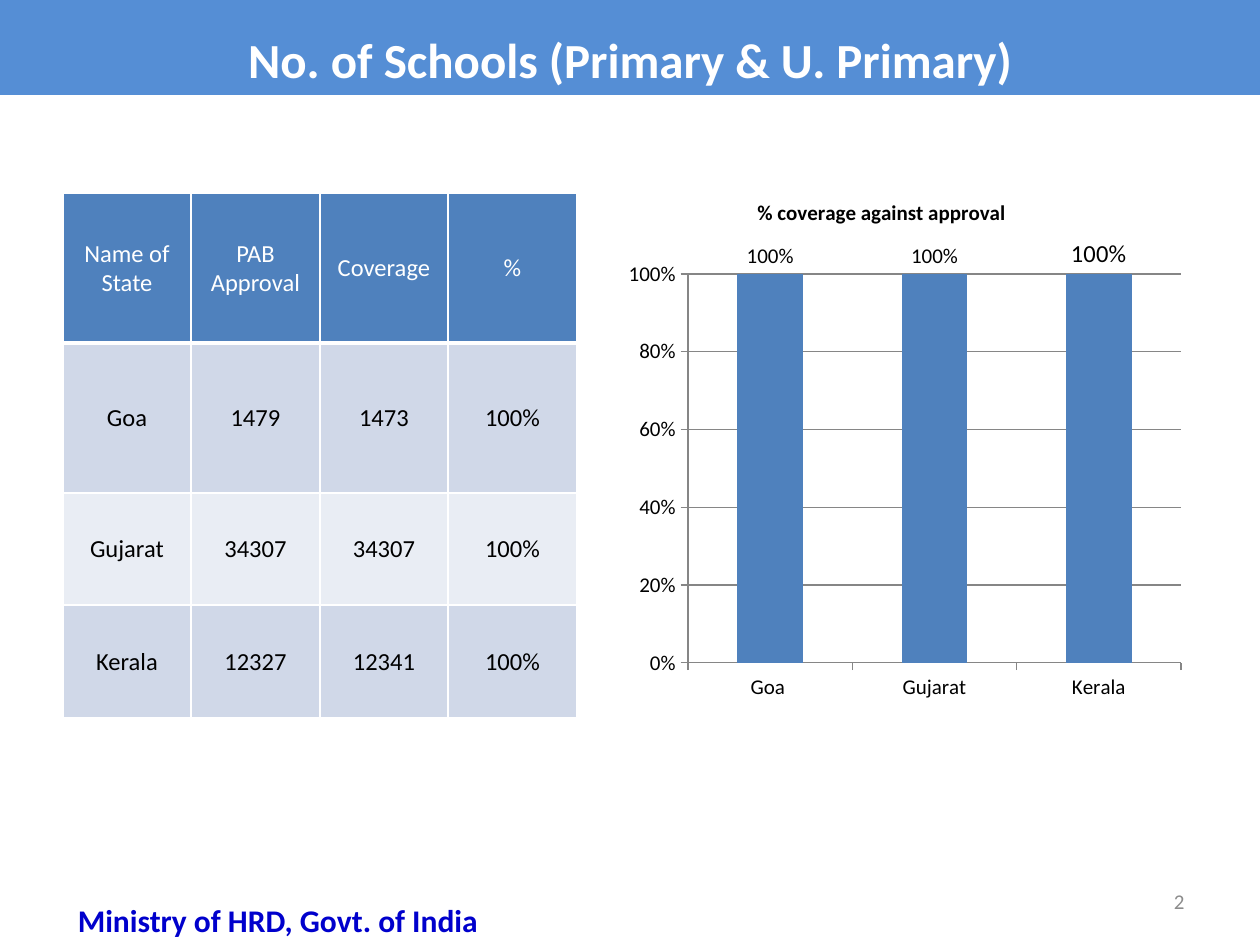
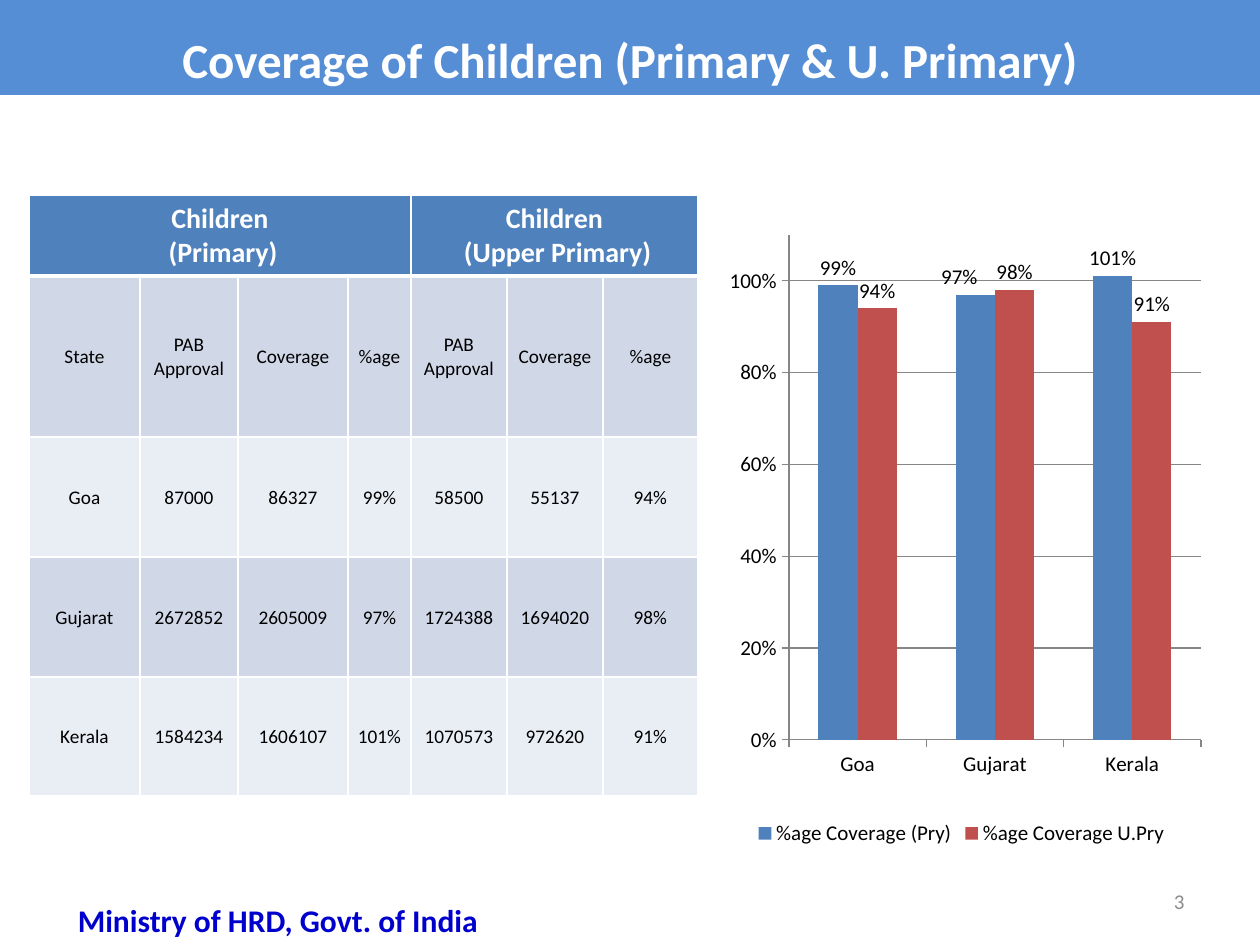
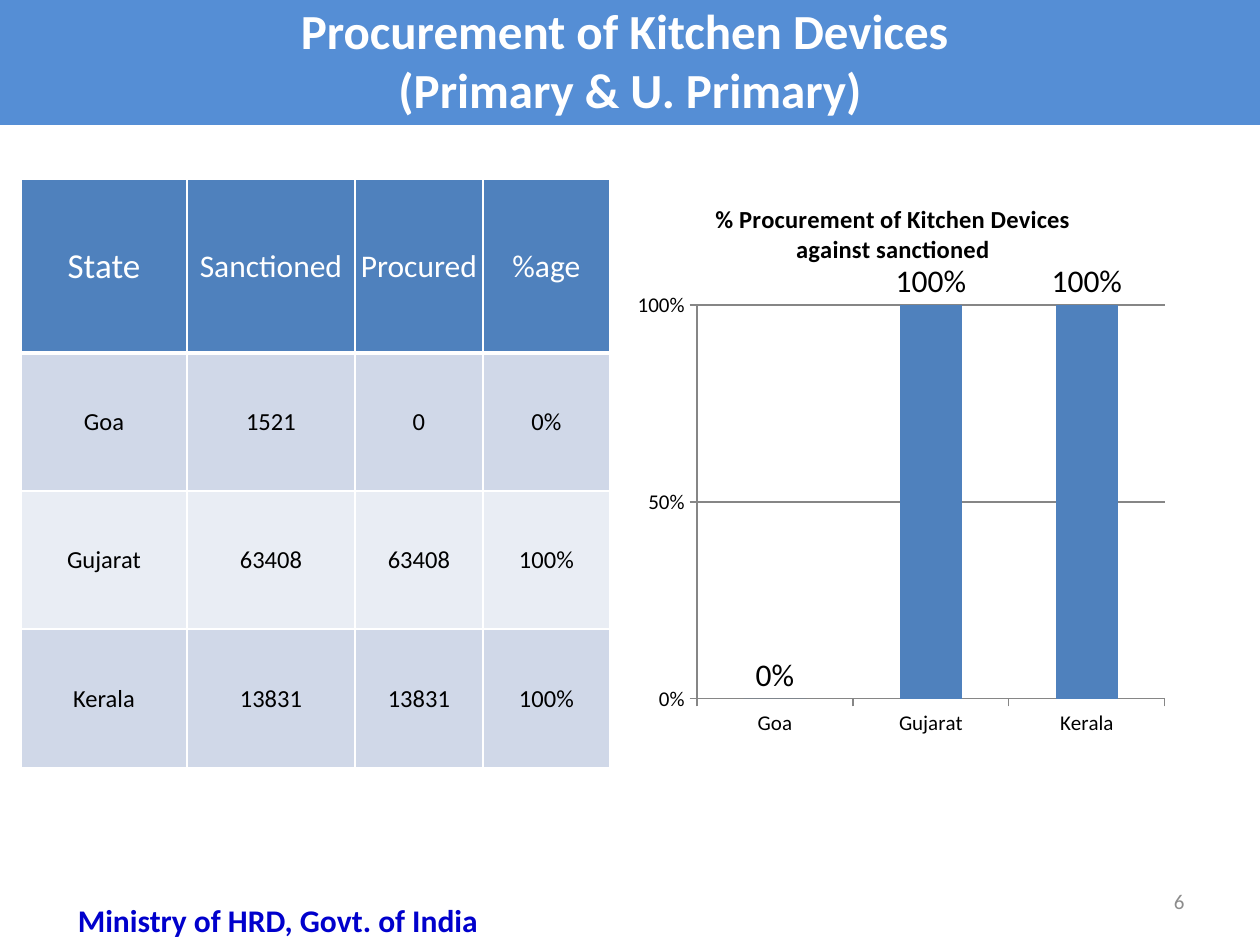
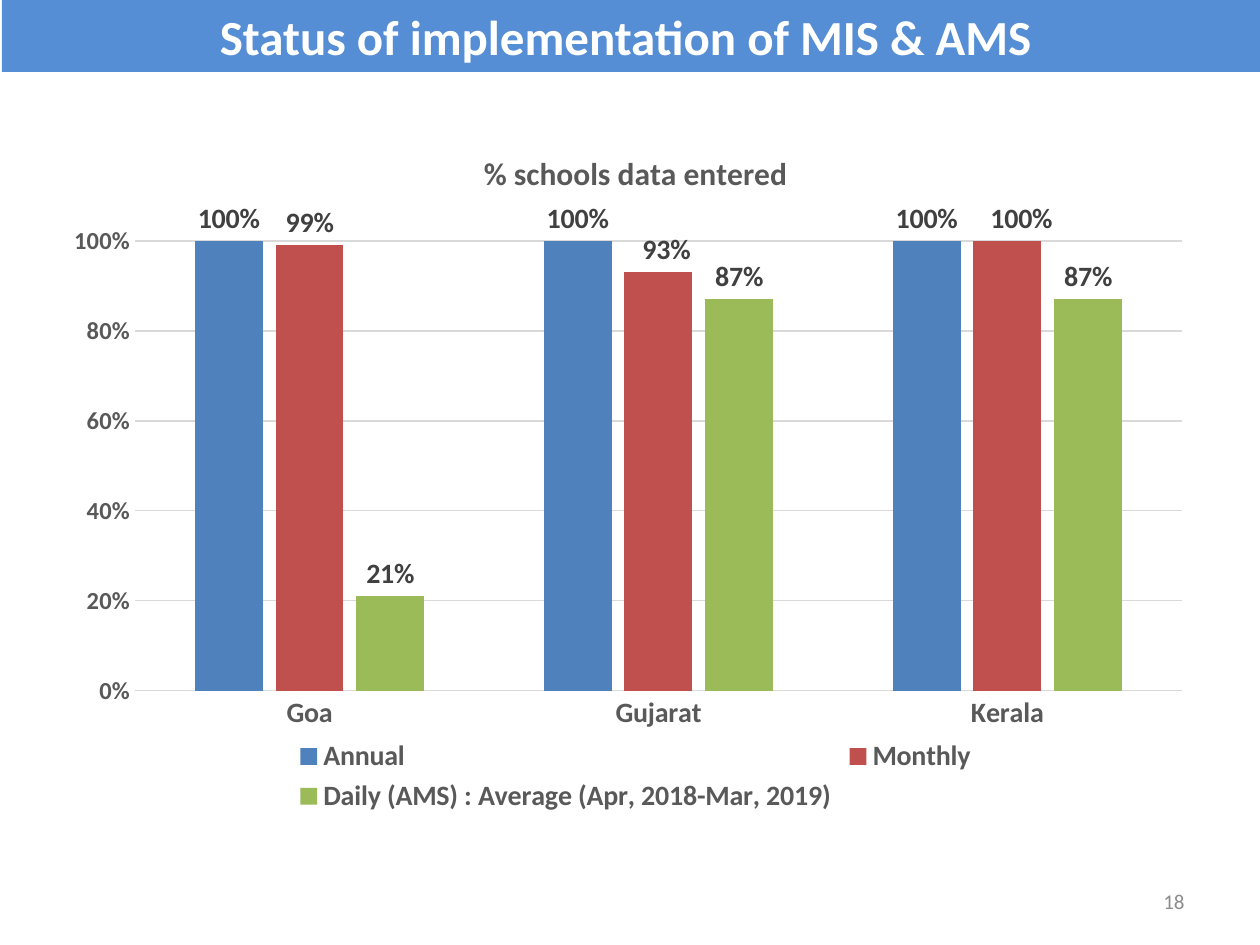
import pptx
import pptx.chart.data
import pptx.dml.color
import pptx.enum.chart
import pptx.enum.shapes
import pptx.enum.text
import pptx.oxml
import pptx.oxml.ns
import pptx.util

COLORS = {
    "band": "558ED5", "white": "FFFFFF", "black": "000000", "ministry": "0000CC",
    "page": "8C8C8C", "header": "4F81BD", "row_dark": "D0D8E8", "row_light": "E9EDF4",
    "axis": "868686", "pale": "D9D9D9", "slate": "595959", "label": "404040",
}
SERIES_COLORS = ["4F81BD", "C0504D", "9BBB59"]
FONT = "Calibri"
ALIGN = pptx.enum.text.PP_ALIGN
MIDDLE = pptx.enum.text.MSO_ANCHOR.MIDDLE
GROW = pptx.enum.text.MSO_AUTO_SIZE.SHAPE_TO_FIT_TEXT
TICK = pptx.enum.chart.XL_TICK_MARK
OUTSIDE_END = pptx.enum.chart.XL_LABEL_POSITION.OUTSIDE_END
STATES = ["Goa", "Gujarat", "Kerala"]


def px(*lengths):
    return [round(length * 914400 / 126) for length in lengths]


def write(frame, text, size, color, bold=False, align=ALIGN.CENTER, first_spacing=None):
    frame.text = text
    for paragraph in frame.paragraphs:
        paragraph.alignment = align
        for run in paragraph.runs:
            run.font.name = FONT
            run.font.size = pptx.util.Pt(size)
            run.font.bold = bold
            run.font.color.rgb = pptx.dml.color.RGBColor.from_string(COLORS[color])
    if first_spacing:
        frame.paragraphs[0].line_spacing = first_spacing


topics = [
    {
        "title": "No. of Schools (Primary & U. Primary)", "page": 2,
        "band": (0, 0, 1260, 95), "spacing": 1.4, "ministry": True,
        "table": {
            "corner": (63, 193), "columns": [128, 129, 128, 129], "rows": [150, 150, 112, 113],
            "spans": [], "sizes": (14, 14), "header_bold": False, "first_size": 14,
            "cells": [
                ["Name of State", "PAB Approval", "Coverage", "%"],
                ["Goa", "1479", "1473", "100%"],
                ["Gujarat", "34307", "34307", "100%"],
                ["Kerala", "12327", "12341", "100%"],
            ],
        },
        "chart": {
            "at": (577, 175, 609, 624), "plot": (688, 274, 493, 389),
            "title": ("% coverage against approval", 12, "black"),
            "categories": ["Goa ", "Gujarat", "Kerala"], "series": {"Series 1": [1, 1, 1]},
            "max": 1, "step": 0.2, "legend": None, "sizes": (12, 12, 12),
            "special_labels": {(0, 2): (0, 14)},
        },
    },
    {
        "title": "Coverage of Children (Primary & U. Primary)", "page": 3,
        "band": (0, 0, 1260, 95), "spacing": 1.4, "ministry": True,
        "table": {
            "corner": (29, 195), "columns": [111, 98, 110, 63, 96, 96, 95],
            "rows": [81, 161, 120, 120, 119], "spans": [(0, 3), (4, 6)],
            "sizes": (16, 11), "header_bold": True, "first_size": 16,
            "cells": [
                ["Children\n (Primary)", "", "", "", "Children\n (Upper Primary)", "", ""],
                ["State", "PAB Approval", "Coverage", "%age", "PAB Approval", "Coverage", "%age"],
                ["Goa", "87000", "86327", "99%", "58500", "55137", "94%"],
                ["Gujarat", "2672852", "2605009", "97%", "1724388", "1694020", "98%"],
                ["Kerala", "1584234", "1606107", "101%", "1070573", "972620", "91%"],
            ],
        },
        "chart": {
            "at": (703, 179, 517, 672), "plot": (789, 235, 412, 505), "title": None,
            "categories": STATES,
            "series": {"%age Coverage (Pry)": [0.99, 0.97, 1.01],
                       "%age Coverage U.Pry": [0.94, 0.98, 0.91]},
            "max": 1.1, "step": 0.2, "legend": 12, "sizes": (12, 12, 12),
            "special_labels": {(0, 1): (-16, 12)},
        },
    },
    {
        "title": "Procurement of Kitchen Devices \n(Primary & U. Primary)", "page": 6,
        "band": (0, -30, 1260, 155), "spacing": 1.4, "ministry": True,
        "table": {
            "corner": (21, 179), "columns": [166, 168, 128, 127], "rows": [174, 138, 138, 139],
            "spans": [], "sizes": (18, 14), "header_bold": False, "first_size": 20,
            "cells": [
                ["State", "Sanctioned", "Procured", "%age"],
                ["Goa", "1521", "0", "0%"],
                ["Gujarat", "63408", "63408", "100%"],
                ["Kerala", "13831", "13831", "100%"],
            ],
        },
        "chart": {
            "at": (620, 179, 546, 590), "plot": (697, 305, 468, 394),
            "title": ("% Procurement of Kitchen Devices against sanctioned", 14, "black"),
            "categories": STATES, "series": {"Series 1": [0, 1, 1]},
            "max": 1, "step": 0.5, "legend": None, "sizes": (12, 12, 18),
            "special_labels": {},
        },
    },
    {
        "title": "Status of implementation of MIS & AMS ", "page": 18,
        "band": (2, 0, 1258, 72), "spacing": None, "ministry": False,
        "table": None,
        "chart": {
            "at": (74, 125, 1123, 694), "plot": (135, 241, 1047, 450),
            "title": ("% schools data entered", 18, "slate"),
            "categories": STATES,
            "series": {"Annual": [1, 1, 1], "Monthly": [0.99, 0.93, 1],
                       "Daily (AMS) : Average (Apr, 2018-Mar, 2019)": [0.21, 0.87, 0.87]},
            "max": 1, "step": 0.2, "legend": 16, "sizes": (16, 14, 16),
            "special_labels": {(1, 1): (8, 16), (1, 2): (14, 16)},
            "bold_pale": True, "gap": 176, "overlap": -19,
        },
    },
]

deck = pptx.Presentation()
deck.slide_width, deck.slide_height = px(1260, 945)

for topic in topics:
    slide = deck.slides.add_slide(deck.slide_layouts[6])

    band = slide.shapes.add_shape(pptx.enum.shapes.MSO_SHAPE.RECTANGLE, *px(*topic["band"]))
    band.shadow.inherit = False
    band.fill.solid()
    band.fill.fore_color.rgb = pptx.dml.color.RGBColor.from_string(COLORS["band"])
    band.line.fill.background()
    band.text_frame.word_wrap = True
    band.text_frame.auto_size = GROW
    band.text_frame.vertical_anchor = MIDDLE
    write(band.text_frame, topic["title"], 28, "white", bold=True, first_spacing=topic["spacing"])

    figures = topic["table"]
    if figures:
        widths, heights = px(*figures["columns"]), px(*figures["rows"])
        grid = slide.shapes.add_table(len(heights), len(widths), *px(*figures["corner"]),
                                      sum(widths), sum(heights)).table
        for column, width in zip(grid.columns, widths):
            column.width = width
        for row, height in zip(grid.rows, heights):
            row.height = height
        for first, last in figures["spans"]:
            grid.cell(0, first).merge(grid.cell(0, last))
        for r, texts in enumerate(figures["cells"]):
            background = "header" if r == 0 else "row_dark" if r % 2 else "row_light"
            for c, text in enumerate(texts):
                cell = grid.cell(r, c)
                cell.fill.solid()
                cell.fill.fore_color.rgb = pptx.dml.color.RGBColor.from_string(COLORS[background])
                cell.vertical_anchor = MIDDLE
                cell.margin_left, cell.margin_right, cell.margin_top, cell.margin_bottom = px(1, 1, 1, 0)
                if text:
                    size = figures["first_size"] if r == c == 0 else figures["sizes"][min(r, 1)]
                    write(cell.text_frame, text, size, "black" if r else "white",
                          bold=figures["header_bold"] and r == 0)
                edges = {"lnL": 1, "lnR": 1, "lnT": 3 if r == 1 else 1, "lnB": 1 if r else 3}
                properties = cell._tc.get_or_add_tcPr()
                for place, (edge, points) in enumerate(edges.items()):
                    properties.insert(place, pptx.oxml.parse_xml(
                        f'<a:{edge} {pptx.oxml.ns.nsdecls("a")} w="{points * 12700}"><a:solidFill>'
                        f'<a:srgbClr val="{COLORS["white"]}"/></a:solidFill></a:{edge}>'))

    coverage = topic["chart"]
    left, top, width, height = coverage["at"]
    emphasis = coverage.get("bold_pale", False)
    data = pptx.chart.data.CategoryChartData(number_format="0%")
    data.categories = coverage["categories"]
    for name, values in coverage["series"].items():
        data.add_series(name, values)
    chart = slide.shapes.add_chart(pptx.enum.chart.XL_CHART_TYPE.COLUMN_CLUSTERED,
                                   *px(*coverage["at"]), data).chart
    chart.font.name = FONT
    chart.has_title = coverage["title"] is not None
    if chart.has_title:
        heading, size, color = coverage["title"]
        write(chart.chart_title.text_frame, heading, size, color, bold=True)

    plot = chart.plots[0]
    plot.vary_by_categories = False
    plot.gap_width = coverage.get("gap", 150)
    plot.overlap = coverage.get("overlap", 0)
    category_size, value_size, label_size = coverage["sizes"]
    axis_text = "slate" if emphasis else "black"
    label_text = "label" if emphasis else "black"
    fonts = [(chart.category_axis.tick_labels.font, category_size, axis_text),
             (chart.value_axis.tick_labels.font, value_size, axis_text)]

    chart.has_legend = coverage["legend"] is not None
    if chart.has_legend:
        chart.legend.position = pptx.enum.chart.XL_LEGEND_POSITION.BOTTOM
        chart.legend.include_in_layout = False
        fonts.append((chart.legend.font, coverage["legend"], axis_text))

    scale = chart.value_axis
    scale.minimum_scale = 0
    scale.maximum_scale = coverage["max"]
    scale.major_unit = coverage["step"]
    scale.has_major_gridlines = True
    scale.tick_labels.number_format = "0%"
    scale.tick_labels.number_format_is_linked = False
    for axis in (chart.category_axis, scale):
        axis.major_tick_mark = TICK.NONE if emphasis else TICK.OUTSIDE
        axis.minor_tick_mark = TICK.NONE
    for rule in (chart.category_axis.format.line, scale.format.line, scale.major_gridlines.format.line):
        rule.width = pptx.util.Pt(0.75)
        rule.color.rgb = pptx.dml.color.RGBColor.from_string(COLORS["pale" if emphasis else "axis"])
    if emphasis:
        scale.format.line.fill.background()

    for series, color in zip(plot.series, SERIES_COLORS):
        series.invert_if_negative = False
        series.format.fill.solid()
        series.format.fill.fore_color.rgb = pptx.dml.color.RGBColor.from_string(color)
        labels = series.data_labels
        labels.show_value = True
        labels.number_format = "0%"
        labels.number_format_is_linked = False
        labels.position = OUTSIDE_END
        fonts.append((labels.font, label_size, label_text))
    for (s, p), (shift, size) in coverage["special_labels"].items():
        label = plot.series[s].points[p].data_label
        label.position = OUTSIDE_END
        fonts.append((label.font, size, label_text))
        if shift:
            index = plot.series[s].data_labels._element.xpath(f'c:dLbl/c:idx[@val="{p}"]')[0]
            index.addnext(pptx.oxml.parse_xml(
                f'<c:layout {pptx.oxml.ns.nsdecls("c")}><c:manualLayout>'
                f'<c:x val="{shift / width:.4f}"/><c:y val="0"/></c:manualLayout></c:layout>'))

    for font, size, color in fonts:
        font.name = FONT
        font.size = pptx.util.Pt(size)
        font.bold = emphasis
        font.color.rgb = pptx.dml.color.RGBColor.from_string(COLORS[color])

    plot_left, plot_top, plot_width, plot_height = coverage["plot"]
    fractions = {"x": (plot_left - left) / width, "y": (plot_top - top) / height,
                 "w": plot_width / width, "h": plot_height / height}
    modes = "".join(f'<c:{key}Mode val="edge"/>' for key in "xy")
    extents = "".join(f'<c:{key} val="{value:.4f}"/>' for key, value in fractions.items())
    area = chart.element.xpath("c:chart/c:plotArea")[0]
    for layout in area.xpath("c:layout"):
        area.remove(layout)
    area.insert(0, pptx.oxml.parse_xml(
        f'<c:layout {pptx.oxml.ns.nsdecls("c")}><c:manualLayout><c:layoutTarget val="inner"/>'
        f'{modes}{extents}</c:manualLayout></c:layout>'))

    page_number = slide.shapes.add_textbox(*px(903, 876, 294, 50)).text_frame
    page_number.word_wrap = True
    page_number.vertical_anchor = MIDDLE
    write(page_number, str(topic["page"]), 12, "page", align=ALIGN.RIGHT)

    if topic["ministry"]:
        ministry = slide.shapes.add_textbox(*px(31, 895, 494, 50)).text_frame
        ministry.word_wrap = True
        ministry.auto_size = GROW
        write(ministry, "Ministry of HRD, Govt. of India", 18, "ministry", bold=True)

deck.save("out.pptx")
